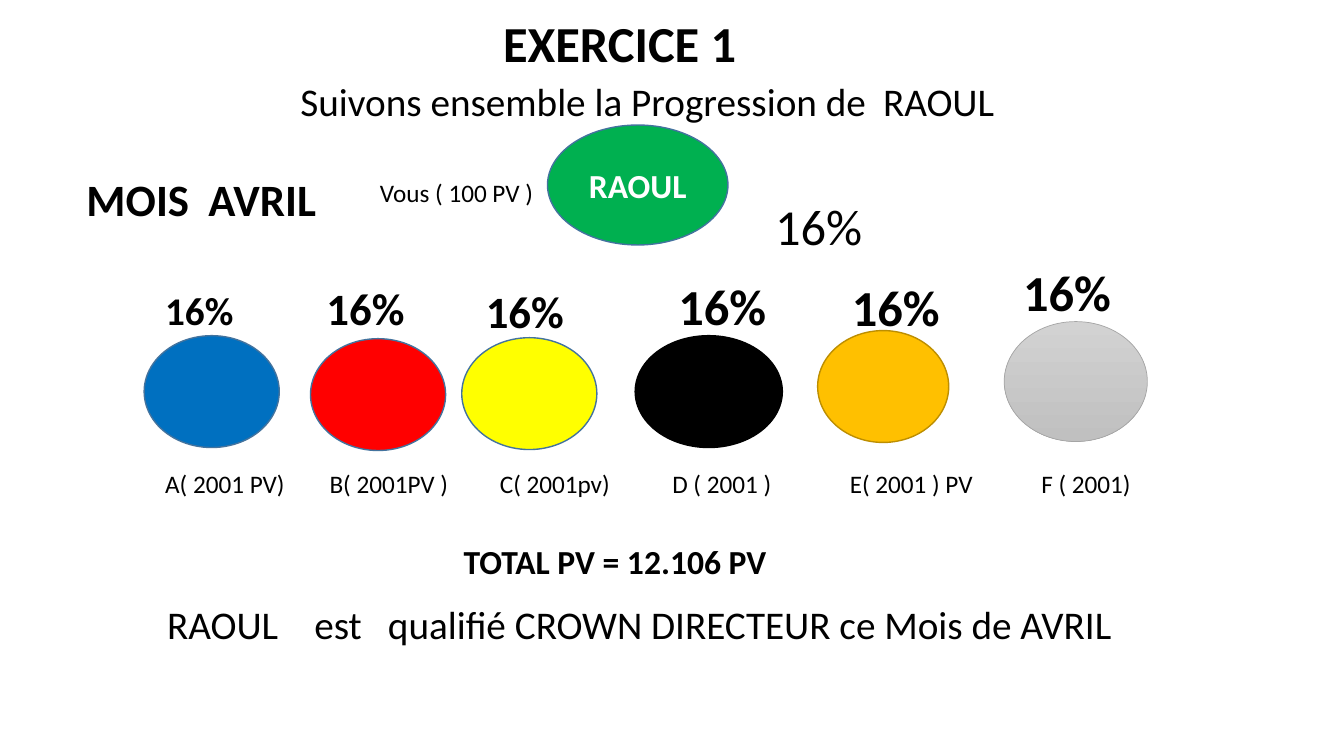
import pptx
import pptx.util
import pptx.dml.color
import pptx.enum.shapes
import pptx.enum.text
from lxml import etree

Inches = pptx.util.Inches
Pt = pptx.util.Pt
RGBColor = pptx.dml.color.RGBColor
PP_ALIGN = pptx.enum.text.PP_ALIGN
MSO_ANCHOR = pptx.enum.text.MSO_ANCHOR

FONT = "Calibri"
BLACK = RGBColor(0, 0, 0)
WHITE = RGBColor(255, 255, 255)
GREEN = RGBColor(0x00, 0xB0, 0x50)
BLUE = RGBColor(0x00, 0x70, 0xC0)
RED = RGBColor(255, 0, 0)
YELLOW = RGBColor(255, 255, 0)
ORANGE = RGBColor(0xFF, 0xC0, 0x00)
LIGHT_GRAY = RGBColor(0xD2, 0xD2, 0xD2)
MID_GRAY = RGBColor(0xC0, 0xC0, 0xC0)
EDGE_BLUE = RGBColor(0x43, 0x73, 0x9E)
EDGE_ORANGE = RGBColor(0xBD, 0x8E, 0x00)
EDGE_GRAY = RGBColor(0xA5, 0xA5, 0xA5)

# Ellipse box, fill colours, edge, edge width; share size and offset; label and offset
MEMBERS = [
    ((1.43, 3.33, 1.34, 1.11), [BLUE], EDGE_BLUE, 1, 28, (0.11, -0.54), "A( 2001 PV)", 0.11),
    ((3.08, 3.36, 1.34, 1.11), [RED], EDGE_BLUE, 1, 32, (0.06, -0.62), "B( 2001PV )", 0.09),
    ((4.58, 3.35, 1.34, 1.11), [YELLOW], EDGE_BLUE, 1, 32, (0.14, -0.58), "C( 2001pv)", 0.28),
    ((6.3, 3.33, 1.46, 1.11), [BLACK], BLACK, 1, 36, (0.33, -0.65), "D ( 2001 )", 0.27),
    ((8.11, 3.28, 1.3, 1.11), [ORANGE], EDGE_ORANGE, 1, 36, (0.24, -0.59), "E( 2001 ) PV", 0.22),
    ((9.96, 3.19, 1.42, 1.19), [LIGHT_GRAY, MID_GRAY], EDGE_GRAY, 0.5, 36, (0.09, -0.65),
     "F ( 2001)", 0.27),
]
LABEL_TOP = 4.6


def format_text(frame, text, size, bold=False, color=BLACK, align=PP_ALIGN.LEFT, tabs=()):
    frame.text = text
    paragraph = frame.paragraphs[0]
    paragraph.alignment = align
    for run in paragraph.runs:
        run.font.name = FONT
        run.font.size = Pt(size)
        run.font.bold = bold
        run.font.color.rgb = color
    if tabs:
        properties = paragraph._p.get_or_add_pPr()
        tab_list = etree.SubElement(properties, pptx.oxml.ns.qn("a:tabLst"))
        for position in tabs:
            etree.SubElement(tab_list, pptx.oxml.ns.qn("a:tab"),
                             pos=str(Inches(position)), algn="l")


def add_label(slide, box, text, size, bold=False, tabs=()):
    label = slide.shapes.add_textbox(*map(Inches, box))
    label.text_frame.word_wrap = True
    format_text(label.text_frame, text, size, bold, tabs=tabs)


def add_ellipse(slide, box, colors, edge, edge_width):
    ellipse = slide.shapes.add_shape(pptx.enum.shapes.MSO_SHAPE.OVAL, *map(Inches, box))
    ellipse.shadow.inherit = False
    if len(colors) == 1:
        ellipse.fill.solid()
        ellipse.fill.fore_color.rgb = colors[0]
    else:
        ellipse.fill.gradient()
        ellipse.fill.gradient_angle = 270
        for stop, color in zip(ellipse.fill.gradient_stops, colors):
            stop.color.rgb = color
    ellipse.line.color.rgb = edge
    ellipse.line.width = Pt(edge_width)
    return ellipse


def add_heading(slide, box):
    left, top, width, height = box
    title = slide.shapes.title
    title.left, title.top, title.width, title.height = map(Inches, (left + 2.01, top, 4, 0.71))
    title.text_frame.vertical_anchor = MSO_ANCHOR.TOP
    title.text_frame.auto_size = pptx.enum.text.MSO_AUTO_SIZE.NONE
    format_text(title.text_frame, "EXERCICE 1", 36, True)
    add_label(slide, (left, top + height - 0.57, width, 0.57),
              "Suivons ensemble la Progression de\tRAOUL", 28, tabs=[5.78])


def add_leader(slide, box):
    left, top, width, height = box
    ellipse = add_ellipse(slide, box, [GREEN], EDGE_BLUE, 1)
    ellipse.text_frame.vertical_anchor = MSO_ANCHOR.MIDDLE
    format_text(ellipse.text_frame, "RAOUL", 24, True, WHITE, PP_ALIGN.CENTER)
    add_label(slide, (left - 4.67, top + 0.41, 2.94, 0.64), "MOIS\tAVRIL", 32, True, [1.21])
    add_label(slide, (left - 1.76, top + 0.47, 1.9, 0.4), "Vous ( 100 PV )", 18)
    add_label(slide, (left + width + 0.37, top + 0.65, 1.76, 0.71), "16%", 36)


def add_member(slide, box, colors, edge, edge_width, share_size, share_offset, name, name_offset):
    left, top = box[:2]
    add_ellipse(slide, box, colors, edge, edge_width)
    add_label(slide, (left + share_offset[0], top + share_offset[1], 1.3, 0.64),
              "16%", share_size, True)
    add_label(slide, (left + name_offset, LABEL_TOP, 1.6, 0.4), name, 18)


def add_conclusion(slide, box):
    left, top, width, height = box
    add_label(slide, (left + 2.94, top, 4, 0.5), "TOTAL PV = 12.106 PV", 24, True)
    add_label(slide, (left, top + height - 0.57, width, 0.57),
              "RAOUL\test\tqualifié CROWN DIRECTEUR ce Mois de AVRIL", 28, tabs=[1.46, 2.19])


def main():
    presentation = pptx.Presentation()
    presentation.slide_width = Inches(13.33)
    presentation.slide_height = Inches(7.5)
    slide = presentation.slides.add_slide(presentation.slide_layouts[5])
    add_heading(slide, (2.88, 0.07, 9.38, 1.22))
    add_leader(slide, (5.43, 1.24, 1.79, 1.19))
    for member in MEMBERS:
        add_member(slide, *member)
    add_conclusion(slide, (1.56, 5.32, 11.5, 1.16))
    presentation.save("out.pptx")


if __name__ == "__main__":
    main()
